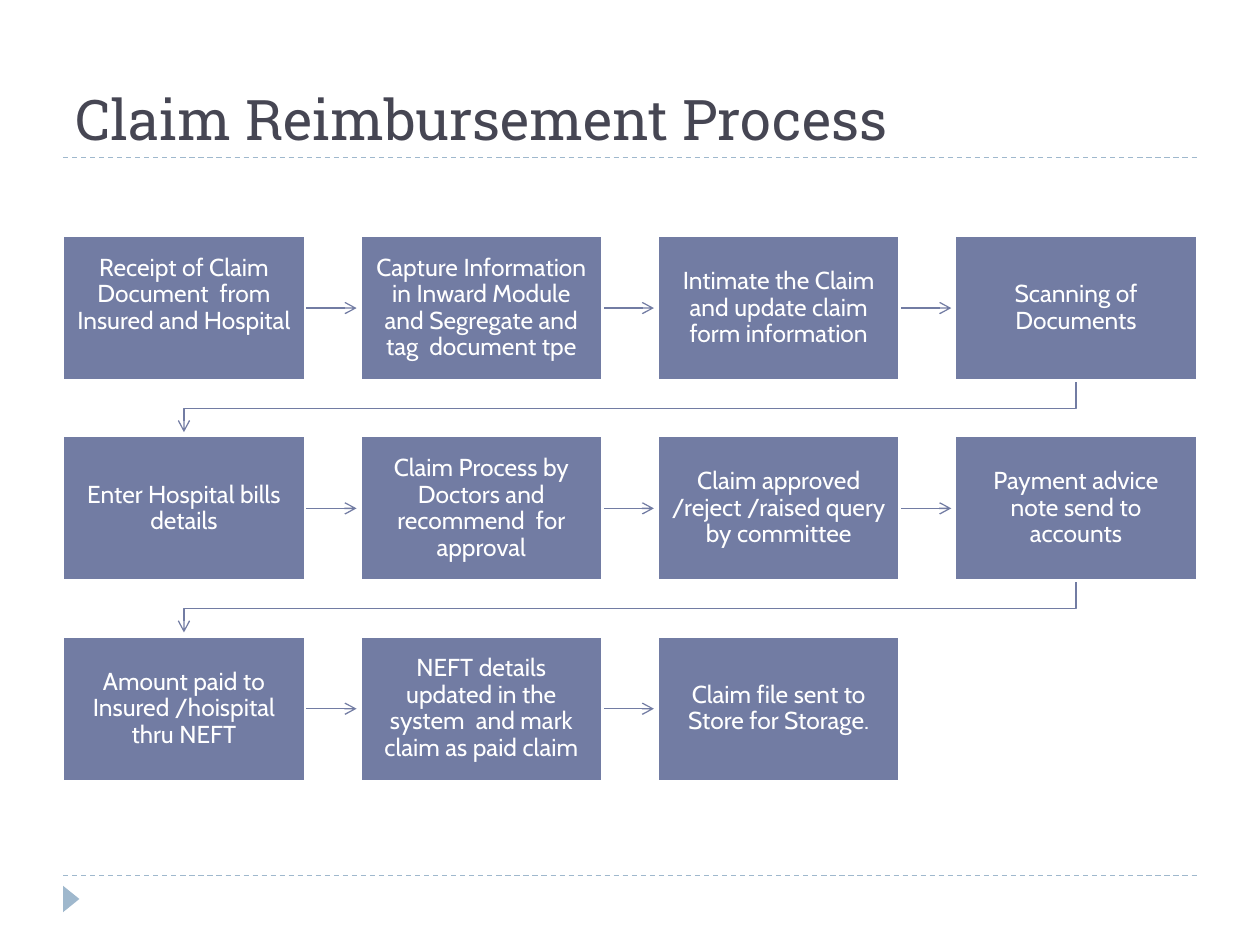
from lxml import etree
from pptx import Presentation
from pptx.dml.color import RGBColor
from pptx.enum.dml import MSO_LINE
from pptx.enum.shapes import MSO_CONNECTOR, MSO_SHAPE
from pptx.enum.text import MSO_ANCHOR, PP_ALIGN
from pptx.oxml.ns import qn
from pptx.util import Inches, Pt

STRAIGHT = MSO_CONNECTOR.STRAIGHT
RECTANGLE, TRIANGLE = MSO_SHAPE.RECTANGLE, MSO_SHAPE.ISOSCELES_TRIANGLE
MIDDLE, BOTTOM = MSO_ANCHOR.MIDDLE, MSO_ANCHOR.BOTTOM
CENTER = PP_ALIGN.CENTER
DASH = MSO_LINE.DASH

WIDTH, HEIGHT = 10, 7.5
MARGIN = 0.05 * WIDTH
COLUMNS = 4
STEP_X, STEP_Y = 2.36, 1.59
BOX_W, BOX_H = 1.92, 1.15
ARROW_GAP = 0.03
INSET = 0.11
EMPTY_LINE = 0.21
INK, ACCENT, PALE, WHITE = "464653", "727CA3", "9FB8CD", "FFFFFF"

STEPS = [
    "Receipt of Claim Document  from Insured and Hospital",
    "Capture Information in Inward Module and Segregate and tag  document tpe",
    "Intimate the Claim and update claim form information",
    "Scanning of Documents",
    "Enter Hospital bills details",
    "Claim Process by Doctors and recommend  for approval",
    "Claim approved /reject /raised query by committee",
    "Payment advice note send to accounts",
    "Amount paid to Insured /hoispital thru NEFT",
    "NEFT details updated in the system  and mark claim as paid claim",
    "Claim file sent to Store for Storage.",
]


def color(value):
    return RGBColor.from_string(value)


def write(para, text, font, size, value):
    span = para.add_run()
    span.text = text
    span.font.name = font
    span.font.size = Pt(size)
    span.font.color.rgb = color(value)


def style_line(shape, value, width=0.75):
    shape.line.color.rgb = color(value)
    shape.line.width = Pt(width)


def add_line(page, start, end, value):
    points = [Inches(length) for length in (*start, *end)]
    line = page.shapes.add_connector(STRAIGHT, *points)
    etree.SubElement(line._element.spPr, qn("a:effectLst"))
    style_line(line, value)
    return line


def add_arrowhead(shape):
    etree.SubElement(shape.line._get_or_add_ln(), qn("a:tailEnd"), type="arrow")


def add_solid(page, kind, left, top, width, height, value):
    shape = page.shapes.add_shape(
        kind, Inches(left), Inches(top), Inches(width), Inches(height))
    shape.shadow.inherit = False
    shape.fill.solid()
    shape.fill.fore_color.rgb = color(value)
    shape.line.fill.background()
    return shape


def add_frame(page):
    for y in (6.95, 1.25):
        rule = add_line(page, (MARGIN, y), (WIDTH - MARGIN, y), PALE)
        rule.line.dash_style = DASH
    marker = add_solid(page, TRIANGLE, 0.46, 7.07, 0.21, 0.13, PALE)
    marker.rotation = 90


def add_title(page, left, top, width, height):
    box = page.shapes.add_textbox(
        Inches(left), Inches(top), Inches(width), Inches(height))
    frame = box.text_frame
    frame.word_wrap = True
    frame.vertical_anchor = BOTTOM
    write(frame.paragraphs[0], "Claim Reimbursement Process", "Roboto Slab", 32, INK)


def add_step(page, left, top, text, extra_bottom):
    box = add_solid(page, RECTANGLE, left, top, BOX_W, BOX_H, ACCENT)
    style_line(box, WHITE, 1.5)
    frame = box.text_frame
    frame.word_wrap = True
    frame.vertical_anchor = MIDDLE
    frame.margin_left = frame.margin_right = frame.margin_top = Inches(INSET)
    frame.margin_bottom = Inches(INSET + extra_bottom)
    para = frame.paragraphs[0]
    para.alignment = CENTER
    para.line_spacing = 0.9
    write(para, text, "Cabin", 14, WHITE)


def add_next_arrow(page, left, top):
    y = top + BOX_H / 2
    arrow = add_line(
        page, (left + BOX_W, y), (left + STEP_X - ARROW_GAP, y), ACCENT)
    add_arrowhead(arrow)


def add_return_arrow(page, first_left, last_left, top):
    start_x, end_x = last_left + BOX_W / 2, first_left + BOX_W / 2
    start_y, end_y = top + BOX_H, top + STEP_Y - ARROW_GAP
    turn_y = (top + BOX_H + top + STEP_Y) / 2
    points = [(start_x, turn_y), (end_x, turn_y), (end_x, end_y)]
    builder = page.shapes.build_freeform(Inches(start_x), Inches(start_y))
    builder.add_line_segments(
        [(Inches(x), Inches(y)) for x, y in points], close=False)
    arrow = builder.convert_to_shape()
    arrow.shadow.inherit = False
    arrow.fill.background()
    style_line(arrow, ACCENT)
    add_arrowhead(arrow)


def add_process(page, left, top):
    for index, text in enumerate(STEPS):
        row, column = divmod(index, COLUMNS)
        x, y = left + column * STEP_X, top + row * STEP_Y
        if column == COLUMNS - 1:
            add_return_arrow(page, left, x, y)
        elif index < len(STEPS) - 1:
            add_next_arrow(page, x, y)
        add_step(page, x, y, text, EMPTY_LINE if index == 0 else 0)


def main():
    deck = Presentation()
    deck.slide_width, deck.slide_height = Inches(WIDTH), Inches(HEIGHT)
    page = deck.slides.add_slide(deck.slide_layouts[6])
    add_frame(page)
    add_title(page, MARGIN, 0.17, WIDTH - 2 * MARGIN, 1.08)
    add_process(page, MARGIN, 1.87)
    deck.save("out.pptx")


if __name__ == "__main__":
    main()
